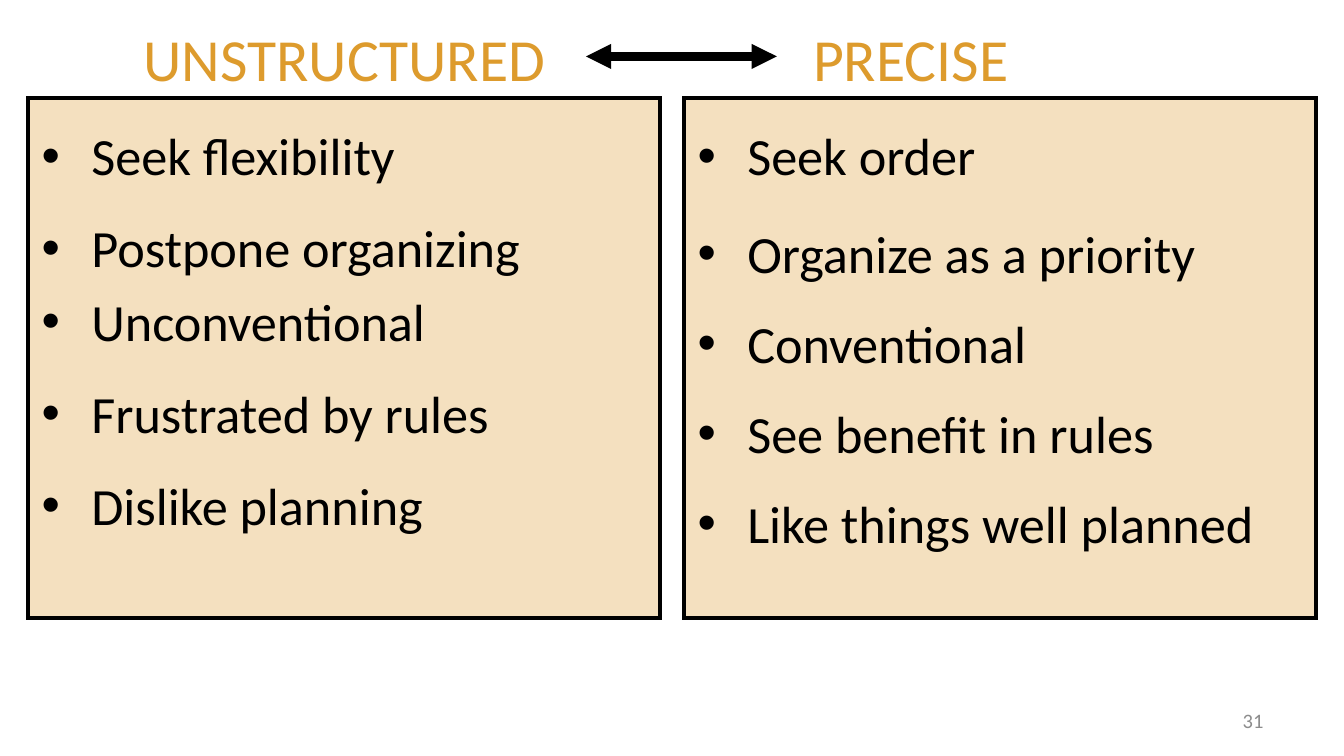
from dataclasses import dataclass
from lxml.etree import SubElement
from pptx import Presentation
from pptx.dml.color import RGBColor
from pptx.enum.shapes import MSO_CONNECTOR
from pptx.enum.text import MSO_ANCHOR, MSO_AUTO_SIZE, PP_ALIGN
from pptx.oxml.ns import qn
from pptx.util import Inches, Pt


@dataclass(frozen=True)
class Theme:
    font: str = "Calibri"
    accent: RGBColor = RGBColor(0xDD, 0x9B, 0x2D)
    ink: RGBColor = RGBColor(0, 0, 0)
    muted: RGBColor = RGBColor(0x8C, 0x8C, 0x8C)
    panel_alpha: int = 30
    heading_size: int = 32
    trait_size: int = 28
    number_size: int = 11


THEME = Theme()

STYLES = [
    {
        "heading": "UNSTRUCTURED",
        "heading_box": (0.85, 0.11, 3.31, 0.64),
        "align": PP_ALIGN.RIGHT,
        "traits": [
            ("Seek flexibility", 1.3, 0),
            ("Postpone organizing", 1.3, 0),
            ("Unconventional", 1, 0),
            ("Frustrated by rules", 1.3, 0),
            ("Dislike planning", 1.3, 0),
        ],
    },
    {
        "heading": "PRECISE",
        "heading_box": (5.95, 0.11, 2.56, 0.64),
        "align": PP_ALIGN.LEFT,
        "traits": [
            ("Seek order", 1.3, 3),
            ("Organize as a priority", 1.3, 9),
            ("Conventional", 1, 9),
            ("See benefit in rules", 1, 9),
            ("Like things well planned", 1, 9),
        ],
    },
]
PAGE_NUMBER = "31"

SLIDE_WIDTH = 10
SLIDE_HEIGHT = SLIDE_WIDTH * 9 / 16
PANEL_TOP, PANEL_WIDTH, PANEL_HEIGHT = 0.73, 4.7, 3.87
MARGIN = 0.21
TRAIT_INDENT = 0.37
TRAIT_GAP = 0.2 * THEME.trait_size
ARROW_START, ARROW_END, ARROW_Y = 4.36, 5.78, 0.42


def place(shape, box):
    shape.left, shape.top, shape.width, shape.height = map(Inches, box)


def prepare_frame(shape, anchor):
    frame = shape.text_frame
    frame.word_wrap = True
    frame.auto_size = MSO_AUTO_SIZE.NONE
    frame.vertical_anchor = anchor
    return frame


def format_font(paragraph, size, color):
    font = paragraph.font
    font.name, font.size, font.bold = THEME.font, Pt(size), False
    font.color.rgb = color


def write_line(shape, text, align, size, color, anchor=MSO_ANCHOR.TOP):
    line = prepare_frame(shape, anchor).paragraphs[0]
    line.text, line.alignment, line.space_before = text, align, Pt(0)
    format_font(line, size, color)


def fill_panel(panel, traits):
    panel.fill.solid()
    panel.fill.fore_color.rgb = THEME.accent
    tint = panel.fill._xPr.find(qn("a:solidFill"))[0]
    SubElement(tint, qn("a:alpha"), val=str(THEME.panel_alpha * 1000))
    panel.line.color.rgb = THEME.ink
    panel.line.width = Pt(2.25)
    SubElement(panel.line._ln, qn("a:miter"), lim="800000")

    frame = prepare_frame(panel, MSO_ANCHOR.TOP)
    for index, (text, spacing, after) in enumerate(traits):
        trait = frame.add_paragraph() if index else frame.paragraphs[0]
        trait.text = text
        properties = trait._p.get_or_add_pPr()
        properties.set("marL", str(Inches(TRAIT_INDENT)))
        properties.set("indent", str(-Inches(TRAIT_INDENT)))
        SubElement(properties, qn("a:buChar"), char="•")
        trait.line_spacing = spacing
        trait.space_before = Pt(TRAIT_GAP if index else 0)
        trait.space_after = Pt(after)
        format_font(trait, THEME.trait_size, THEME.ink)


def add_double_arrow(slide):
    arrow = slide.shapes.add_connector(
        MSO_CONNECTOR.STRAIGHT,
        Inches(ARROW_START), Inches(ARROW_Y), Inches(ARROW_END), Inches(ARROW_Y),
    )
    arrow.line.color.rgb = THEME.ink
    arrow.line.width = Pt(4.5)
    for end in ("a:headEnd", "a:tailEnd"):
        SubElement(arrow.line._ln, qn(end), type="triangle")
    SubElement(arrow._element.spPr, qn("a:effectLst"))


def main():
    deck = Presentation()
    deck.slide_width, deck.slide_height = Inches(SLIDE_WIDTH), Inches(SLIDE_HEIGHT)
    comparison = deck.slide_layouts.get_by_name("Comparison")
    slide = deck.slides.add_slide(comparison)
    title, *areas = slide.placeholders
    title._element.getparent().remove(title._element)

    for side, style in enumerate(STYLES):
        heading, panel = areas[2 * side:2 * side + 2]
        place(heading, style["heading_box"])
        write_line(heading, style["heading"], style["align"],
                   THEME.heading_size, THEME.accent)
        left = (SLIDE_WIDTH - MARGIN - PANEL_WIDTH) if side else MARGIN
        place(panel, (left, PANEL_TOP, PANEL_WIDTH, PANEL_HEIGHT))
        fill_panel(panel, style["traits"])

    add_double_arrow(slide)

    number = slide.shapes.add_textbox(*map(Inches, (7.17, 5.21, 2.33, 0.3)))
    write_line(number, PAGE_NUMBER, PP_ALIGN.RIGHT,
               THEME.number_size, THEME.muted, MSO_ANCHOR.MIDDLE)

    deck.save("out.pptx")


if __name__ == "__main__":
    main()
